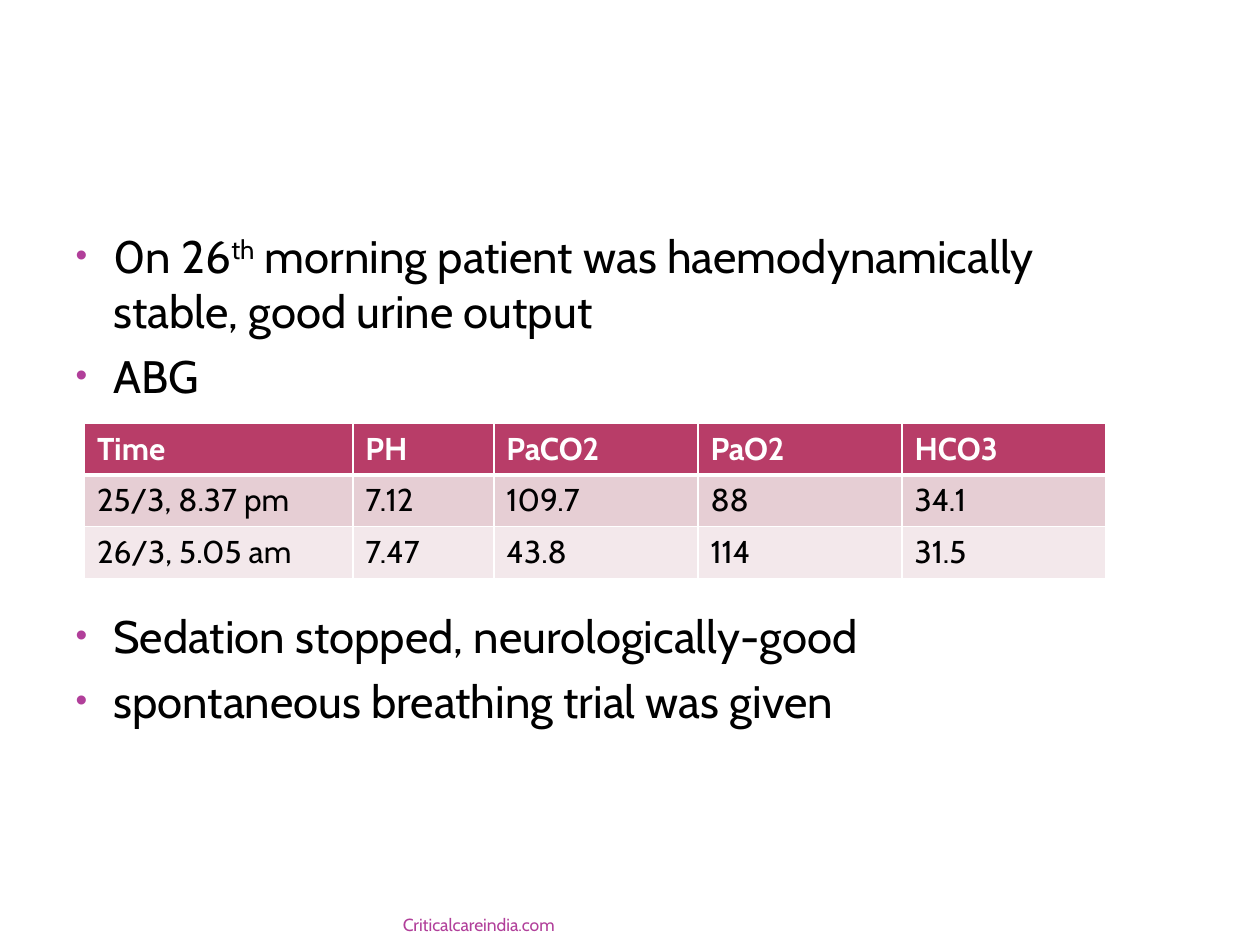
"""Build a slide of a patient's morning findings with an ABG table."""
from dataclasses import dataclass

from lxml import etree
from pptx import Presentation
from pptx import util as u
from pptx.dml.color import RGBColor
from pptx.enum import text
from pptx.oxml.ns import qn

FONT = "Cabin"
BLACK = RGBColor(0x00, 0x00, 0x00)
WHITE = RGBColor(0xFF, 0xFF, 0xFF)
MAGENTA = RGBColor(0xB1, 0x3F, 0x9A)
ROSE = RGBColor(0xB8, 0x3D, 0x68)
ROSE_MID = RGBColor(0xE6, 0xCE, 0xD4)
ROSE_PALE = RGBColor(0xF3, 0xE8, 0xEB)

WIDTH, HEIGHT = u.Inches(10), u.Inches(7.5)
ROW_HEIGHT = u.Inches(0.41)
COLUMN_WIDTHS = (2.13, 1.12, 1.62, 1.62, 1.62)
TABLE_GAP = 117.4


@dataclass(frozen=True)
class Finding:
    before: str
    raised: str = ""
    after: str = ""
    space_before: float = 6


@dataclass(frozen=True)
class Reading:
    values: tuple[str, ...]
    fill: RGBColor
    ink: RGBColor = BLACK
    bold: bool = False
    top: float = 1
    bottom: float = 1


FINDINGS = (
    Finding("0n 26", "th", " morning patient was haemodynamically stable, good urine output", 0),
    Finding("ABG"),
    Finding("Sedation stopped, neurologically-good", space_before=TABLE_GAP),
    Finding("spontaneous breathing trial was given"),
)
READINGS = (
    Reading(("Time", "PH", "PaCO2", "PaO2", "HCO3"), ROSE, WHITE, True, bottom=3),
    Reading(("25/3, 8.37 pm", "7.12", "109.7", "88", "34.1"), ROSE_MID, top=3),
    Reading(("26/3, 5.05 am", "7.47", "43.8", "114", "31.5"), ROSE_PALE),
)


def set_font(paragraph, size: float, color: RGBColor, bold: bool = False) -> None:
    """Format a whole paragraph."""
    font = paragraph.font
    font.name, font.size, font.bold = FONT, u.Pt(size), bold
    font.color.rgb = color


def add_bullet(paragraph) -> None:
    """Give a paragraph a small coloured bullet and a hanging indent."""
    properties = paragraph._p.get_or_add_pPr()
    properties.set("marL", str(u.Inches(0.3)))
    properties.set("indent", str(-u.Inches(0.3)))
    color = etree.SubElement(properties, qn("a:buClr"))
    etree.SubElement(color, qn("a:srgbClr"), val=str(MAGENTA))
    etree.SubElement(properties, qn("a:buSzPct"), val="73000")
    etree.SubElement(properties, qn("a:buFont"), typeface="Arial")
    etree.SubElement(properties, qn("a:buChar"), char="•")


def write_findings(body, findings: tuple[Finding, ...]) -> None:
    """Fill the body placeholder with bulleted findings."""
    body.left, body.top = int(WIDTH * 0.05), u.Inches(1.76)
    body.width, body.height = u.Inches(7.92), u.Inches(5.3)
    frame = body.text_frame
    frame.auto_size = text.MSO_AUTO_SIZE.NONE
    for index, finding in enumerate(findings):
        paragraph = frame.add_paragraph() if index else frame.paragraphs[0]
        add_bullet(paragraph)
        paragraph.space_before = u.Pt(finding.space_before)
        set_font(paragraph, 26, BLACK)
        paragraph.add_run().text = finding.before
        if finding.raised:
            ordinal = paragraph.add_run()
            ordinal.text = finding.raised
            ordinal.font._element.set("baseline", "30000")
            paragraph.add_run().text = finding.after


def add_borders(cell, top: float, bottom: float) -> None:
    """Draw white borders around a table cell."""
    properties = cell._tc.get_or_add_tcPr()
    for side, points in (("L", 1), ("R", 1), ("T", top), ("B", bottom)):
        line = etree.SubElement(properties, qn(f"a:ln{side}"), w=str(u.Pt(points)))
        fill = etree.SubElement(line, qn("a:solidFill"))
        etree.SubElement(fill, qn("a:srgbClr"), val=str(WHITE))


def add_readings(slide, readings: tuple[Reading, ...]) -> None:
    """Add the blood gas table."""
    table = slide.shapes.add_table(
        len(readings), len(COLUMN_WIDTHS), u.Inches(0.67), u.Inches(3.36),
        u.Inches(sum(COLUMN_WIDTHS)), ROW_HEIGHT * len(readings)).table
    for column, width in zip(table.columns, COLUMN_WIDTHS):
        column.width = u.Inches(width)
    for row, reading in zip(table.rows, readings):
        row.height = ROW_HEIGHT
        for cell, value in zip(row.cells, reading.values):
            add_borders(cell, reading.top, reading.bottom)
            cell.fill.solid()
            cell.fill.fore_color.rgb = reading.fill
            cell.text = value
            set_font(cell.text_frame.paragraphs[0], 18, reading.ink, reading.bold)


def add_footer(slide, address: str) -> None:
    """Add the right-aligned web address at the foot."""
    footer = slide.shapes.add_textbox(
        int(WIDTH * 0.05), u.Inches(7.17), int(WIDTH * 0.4), u.Inches(0.25))
    frame = footer.text_frame
    frame.word_wrap = True
    frame.vertical_anchor = text.MSO_ANCHOR.BOTTOM
    frame.margin_top = frame.margin_bottom = 0
    paragraph = frame.paragraphs[0]
    paragraph.text = address
    paragraph.alignment = text.PP_ALIGN.RIGHT
    set_font(paragraph, 10, MAGENTA)


def main() -> None:
    """Build and save the slide."""
    presentation = Presentation()
    presentation.slide_width, presentation.slide_height = WIDTH, HEIGHT
    slide = presentation.slides.add_slide(presentation.slide_layouts[1])
    title = slide.shapes.title.element
    title.getparent().remove(title)
    write_findings(slide.placeholders[1], FINDINGS)
    add_readings(slide, READINGS)
    add_footer(slide, "Criticalcareindia.com")
    presentation.save("out.pptx")


if __name__ == "__main__":
    main()
